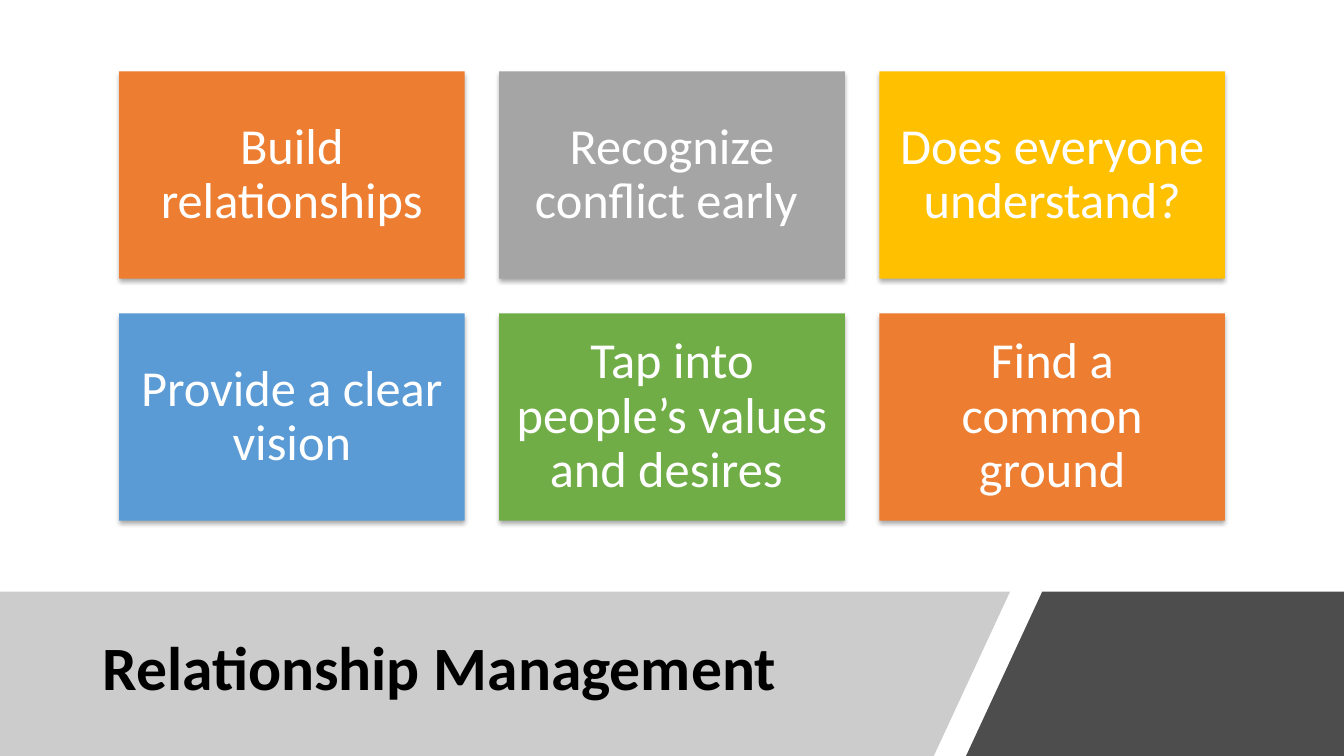
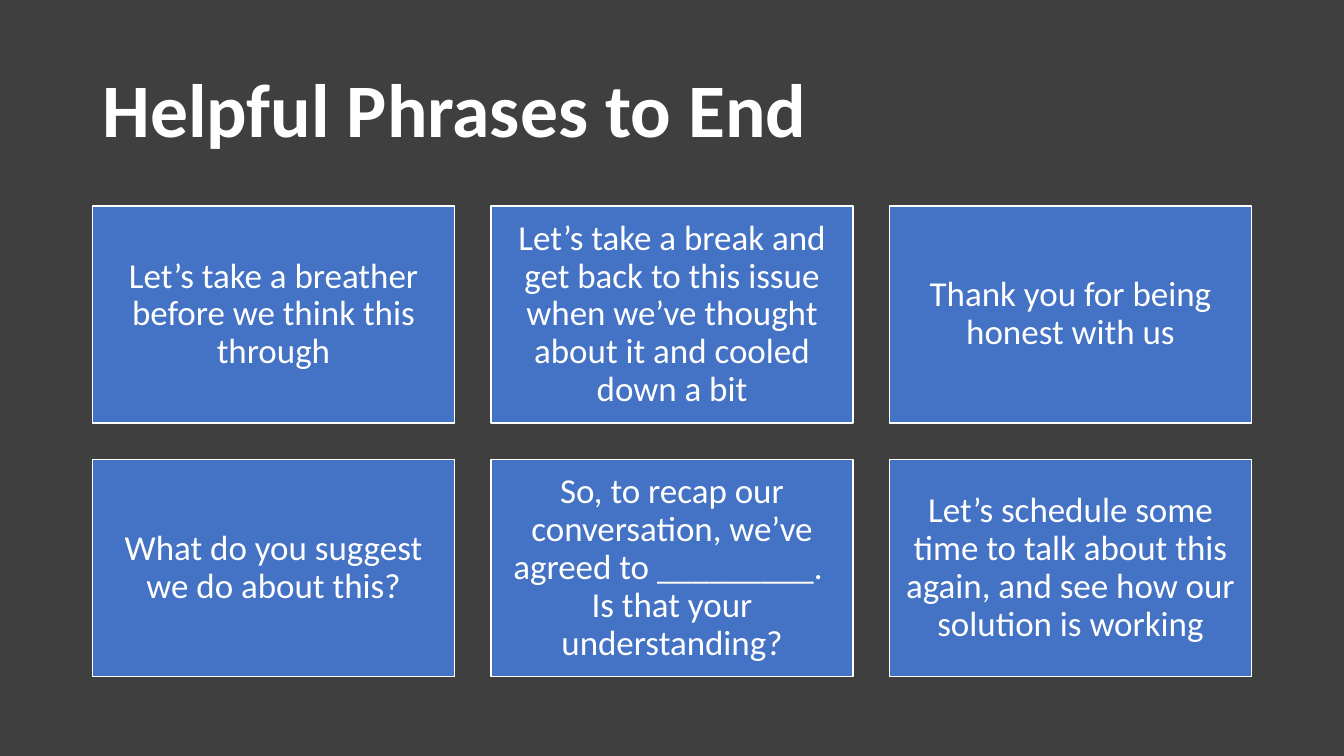
from lxml.etree import SubElement
from pptx import Presentation
from pptx.dml.color import RGBColor
from pptx.enum.shapes import MSO_SHAPE
from pptx.enum.text import MSO_ANCHOR, MSO_AUTO_SIZE, PP_ALIGN
from pptx.oxml.ns import qn
from pptx.util import Pt

FONT = "Calibri"
WIDTH, HEIGHT = 960, 540
WHITE, BLACK, DARK = "FFFFFF", "000000", "3F3F3F"
LIGHT_BAND, DARK_BAND = "CCCCCC", "4D4D4D"
ORANGE, GRAY, GOLD = "ED7D31", "A5A5A5", "FFC000"
SKY, GREEN, BLUE = "5B9BD5", "70AD47", "4472C4"

BUILDING = [
    ("Build relationships", ORANGE),
    ("Recognize conflict early ", GRAY),
    ("Does everyone understand?", GOLD),
    ("Provide a clear vision", SKY),
    ("Tap into people’s values and desires ", GREEN),
    ("Find a common ground", ORANGE),
]
PHRASES = [
    "Let’s take a breather before we think this through",
    "Let’s take a break and get back to this issue when we’ve thought "
    "about it and cooled down a bit",
    "Thank you for being honest with us",
    "What do you suggest we do about this?",
    "So, to recap our conversation, we’ve agreed to _________.  "
    "Is that your understanding?",
    "Let’s schedule some time to talk about this again, and see how our "
    "solution is working",
]


def rgb(color):
    return RGBColor.from_string(color)


def paint(sp, fill, line=None):
    sp.shadow.inherit = False
    sp.fill.solid()
    sp.fill.fore_color.rgb = rgb(fill)
    if line:
        sp.line.color.rgb = rgb(line)
        sp.line.width = Pt(1)
    else:
        sp.line.fill.background()


def write(sp, text, size, color, align, bold=False):
    tf = sp.text_frame
    tf.text = text
    tf.word_wrap = True
    tf.auto_size = MSO_AUTO_SIZE.NONE
    tf.vertical_anchor = MSO_ANCHOR.MIDDLE
    p = tf.paragraphs[0]
    p.alignment = align
    p.line_spacing = 0.9
    font = p.runs[0].font
    font.name, font.size, font.bold = FONT, Pt(size), bold
    font.color.rgb = rgb(color)


def add_slide(prs, background):
    s = prs.slides.add_slide(prs.slide_layouts[5])
    s.background.fill.solid()
    s.background.fill.fore_color.rgb = rgb(background)
    return s


def set_title(s, text, box, size, color):
    sp = s.shapes.title
    sp.left, sp.top, sp.width, sp.height = map(Pt, box)
    write(sp, text, size, color, PP_ALIGN.LEFT, bold=True)


def soft_shadow(sp):
    effects = sp.element.spPr.find(qn("a:effectLst"))
    shadow = SubElement(effects, qn("a:outerShdw"), blurRad=str(Pt(3.5)),
                        dist=str(Pt(2.2)), dir="5400000", rotWithShape="0")
    color = SubElement(shadow, qn("a:srgbClr"), val=BLACK)
    SubElement(color, qn("a:alpha"), val="32000")


def card_grid(s, left, top, width, cards, size, line=None, shadow=False):
    """Three cards a row; gap and height follow from the card width."""
    card_w = width / 3.2
    card_h, gap = card_w * 0.6, card_w * 0.1
    for i, (text, fill) in enumerate(cards):
        row, col = divmod(i, 3)
        sp = s.shapes.add_shape(
            MSO_SHAPE.RECTANGLE,
            Pt(left + col * (card_w + gap)), Pt(top + row * (card_h + gap)),
            Pt(card_w), Pt(card_h))
        paint(sp, fill, line)
        if shadow:
            soft_shadow(sp)
        write(sp, text, size, WHITE, PP_ALIGN.CENTER)
        tf = sp.text_frame
        tf.margin_left = tf.margin_right = Pt(size * 0.3)
        tf.margin_top = tf.margin_bottom = Pt(size * 0.3)


def title_band(s, top):
    """Two slanted panels from top down to the slide's lower edge."""
    slant = 54.5
    light_edge, dark_edge = 721.5, 744.5
    panels = [
        (LIGHT_BAND, [(0, top), (light_edge, top),
                      (light_edge - slant, HEIGHT), (0, HEIGHT)]),
        (DARK_BAND, [(dark_edge, top), (WIDTH, top),
                     (WIDTH, HEIGHT), (dark_edge - slant, HEIGHT)]),
    ]
    for fill, corners in panels:
        points = [(Pt(x), Pt(y)) for x, y in corners]
        outline = s.shapes.build_freeform(*points[0])
        outline.add_line_segments(points[1:], close=True)
        paint(outline.convert_to_shape(), fill)
    # Bring the title in front of the panels
    s.shapes.element.append(s.shapes.title.element)


def relationship_slide(prs):
    s = add_slide(prs, WHITE)
    title_band(s, 422.5)
    set_title(s, "Relationship Management", (66, 435.5, 608, 86.5), 44, BLACK)
    card_grid(s, 85, 51, 790, BUILDING, 36, shadow=True)


def phrases_slide(prs):
    s = add_slide(prs, DARK)
    set_title(s, "Helpful Phrases to End", (66, 28.75, 828, 104.5), 54, WHITE)
    card_grid(s, 66, 147, 828, [(text, BLUE) for text in PHRASES], 25,
              line=WHITE)


def main():
    prs = Presentation()
    prs.slide_width, prs.slide_height = Pt(WIDTH), Pt(HEIGHT)
    relationship_slide(prs)
    phrases_slide(prs)
    prs.save("out.pptx")


if __name__ == "__main__":
    main()
